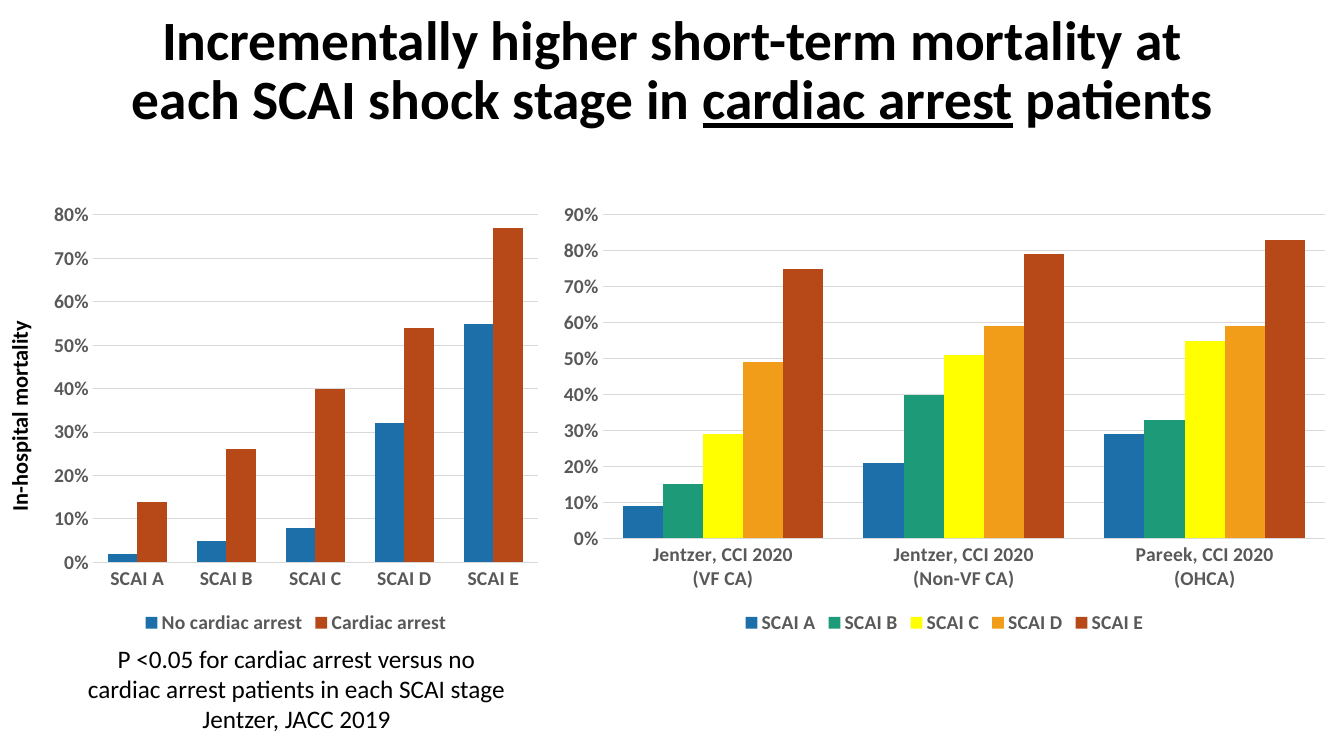
"""Build a slide comparing mortality by SCAI shock stage in cardiac arrest patients."""
from pptx import Presentation
from pptx.chart.data import CategoryChartData
from pptx.dml.color import RGBColor
from pptx.enum.chart import XL_CHART_TYPE, XL_LEGEND_POSITION, XL_TICK_MARK
from pptx.enum.text import MSO_ANCHOR, PP_ALIGN
from pptx.util import Emu, Pt

CLUSTERED = XL_CHART_TYPE.COLUMN_CLUSTERED
LEGEND_BOTTOM = XL_LEGEND_POSITION.BOTTOM
NO_TICK = XL_TICK_MARK.NONE
CENTER = PP_ALIGN.CENTER
TOP, MIDDLE = MSO_ANCHOR.TOP, MSO_ANCHOR.MIDDLE

FONT = "Calibri"
COLORS = {
    "black": "000000", "label": "595959", "grid": "D9D9D9", "blue": "1D6FA9",
    "green": "1D9A78", "yellow": "FFFF00", "orange": "F19D19", "rust": "B74919",
}

TITLE = [[
    ("Incrementally higher short-term mortality at each SCAI shock stage in ", False),
    ("cardiac arrest", True),
    (" patients", False),
]]
AXIS_LABEL = [[("In-hospital mortality", False)]]
NOTE = [
    [("P <0.05 for cardiac arrest versus no cardiac arrest patients in each SCAI stage", False)],
    [("Jentzer, JACC 2019", False)],
]

CHARTS = [
    {
        "box": (44, 194, 504, 445),
        "maximum": 0.8,
        "categories": ["SCAI A", "SCAI B", "SCAI C", "SCAI D", "SCAI E"],
        "series": [
            ("No cardiac arrest", "blue", (0.02, 0.05, 0.08, 0.32, 0.55)),
            ("Cardiac arrest", "rust", (0.14, 0.26, 0.4, 0.54, 0.77)),
        ],
    },
    {
        "box": (548, 194, 793, 445),
        "maximum": 0.9,
        "categories": [
            "Jentzer, CCI 2020\n(VF CA)",
            "Jentzer, CCI 2020\n(Non-VF CA)",
            "Pareek, CCI 2020\n(OHCA)",
        ],
        "series": [
            ("SCAI A", "blue", (0.09, 0.21, 0.29)),
            ("SCAI B", "green", (0.15, 0.4, 0.33)),
            ("SCAI C", "yellow", (0.29, 0.51, 0.55)),
            ("SCAI D", "orange", (0.49, 0.59, 0.59)),
            ("SCAI E", "rust", (0.75, 0.79, 0.83)),
        ],
    },
]


def px(length):
    return Emu(round(length * 914400 / 100.8))


def color(name):
    return RGBColor.from_string(COLORS[name])


def style_font(font, size, color_name, bold):
    font.name = FONT
    font.size = Pt(size)
    font.bold = bold
    font.color.rgb = color(color_name)


def style_line(line):
    line.color.rgb = color("grid")
    line.width = Pt(0.75)


def add_text(slide, box, paragraphs, size, bold, anchor=TOP, spacing=1.0, rotation=0):
    shape = slide.shapes.add_textbox(*map(px, box))
    shape.rotation = rotation
    frame = shape.text_frame
    frame.word_wrap = True
    frame.vertical_anchor = anchor
    for index, runs in enumerate(paragraphs):
        paragraph = frame.add_paragraph() if index else frame.paragraphs[0]
        paragraph.alignment = CENTER
        paragraph.line_spacing = spacing
        for text, underlined in runs:
            run = paragraph.add_run()
            run.text = text
            style_font(run.font, size, "black", bold)
            run.font.underline = underlined


def add_column_chart(slide, content):
    data = CategoryChartData(number_format="0%")
    data.categories = content["categories"]
    for name, _, values in content["series"]:
        data.add_series(name, values)
    chart = slide.shapes.add_chart(CLUSTERED, *map(px, content["box"]), data).chart
    chart.has_title = False
    style_font(chart.font, 14, "black", True)

    chart.has_legend = True
    chart.legend.position = LEGEND_BOTTOM
    chart.legend.include_in_layout = False
    style_font(chart.legend.font, 14, "label", True)

    for axis in (chart.category_axis, chart.value_axis):
        axis.major_tick_mark = NO_TICK
        axis.minor_tick_mark = NO_TICK
        style_font(axis.tick_labels.font, 14, "label", True)
    style_line(chart.category_axis.format.line)

    value_axis = chart.value_axis
    value_axis.format.line.fill.background()
    value_axis.minimum_scale = 0
    value_axis.maximum_scale = content["maximum"]
    value_axis.major_unit = 0.1
    value_axis.tick_labels.number_format = "0%"
    value_axis.tick_labels.number_format_is_linked = False
    style_line(value_axis.major_gridlines.format.line)

    plot = chart.plots[0]
    plot.gap_width = 100
    plot.overlap = 0
    plot.vary_by_categories = False
    for series, (_, color_name, _) in zip(plot.series, content["series"]):
        series.format.fill.solid()
        series.format.fill.fore_color.rgb = color(color_name)


def main():
    presentation = Presentation()
    presentation.slide_width = px(1344)
    presentation.slide_height = px(756)
    slide = presentation.slides.add_slide(presentation.slide_layouts[6])
    add_text(slide, (-231, 394, 507, 44), AXIS_LABEL, 16, True, rotation=270)
    add_text(slide, (93, -1, 1159, 146), TITLE, 39.6, True, MIDDLE, 0.9)
    for content in CHARTS:
        add_column_chart(slide, content)
    add_text(slide, (77, 638, 439, 102), NOTE, 18, False)
    presentation.save("out.pptx")


if __name__ == "__main__":
    main()
